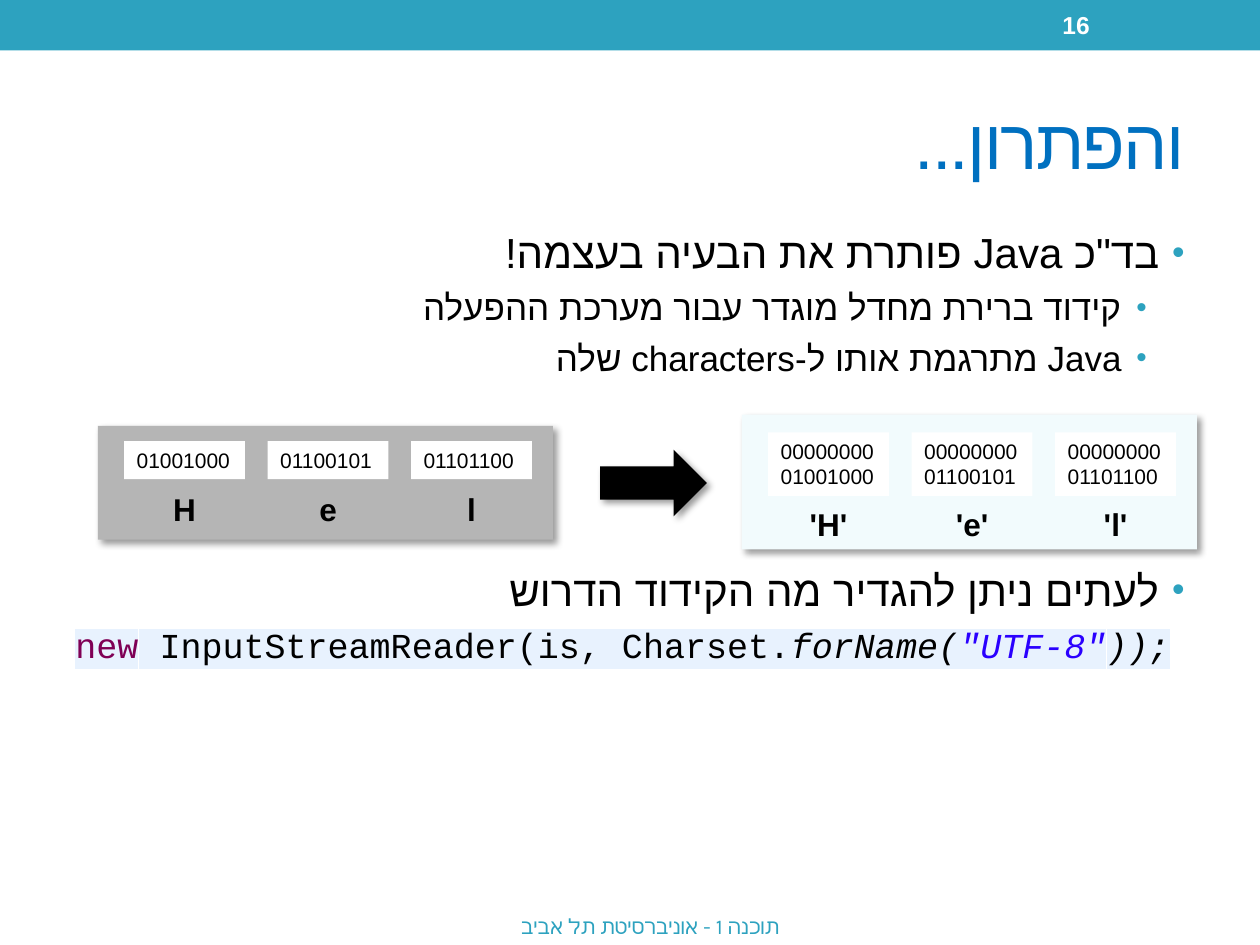
import pptx
import pptx.util
import pptx.oxml
import pptx.oxml.ns
import pptx.dml.color
import pptx.enum.shapes
import pptx.enum.text

Pt = pptx.util.Pt
RGB = pptx.dml.color.RGBColor
Kind = pptx.enum.shapes.MSO_SHAPE
Align = pptx.enum.text.PP_ALIGN
Anchor = pptx.enum.text.MSO_ANCHOR
NS = pptx.oxml.ns.nsdecls("a")

TEAL = RGB(0x2D, 0xA2, 0xBF)
BLUE = RGB(0x00, 0x70, 0xC0)
BLACK = RGB(0, 0, 0)
WHITE = RGB(0xFF, 0xFF, 0xFF)
GRAY = RGB(0xB5, 0xB5, 0xB5)
PALE = RGB(0xF2, 0xFB, 0xFD)
PLUM = RGB(0x7F, 0x00, 0x55)
INK = RGB(0x2A, 0x00, 0xFF)
GLOW = RGB(0xE8, 0xF2, 0xFE)


def add_box(home, kind, place, fill, shade=False):
    box = home.add_shape(kind, *[Pt(n) for n in place])
    box.fill.solid()
    box.fill.fore_color.rgb = fill
    box.line.fill.background()
    box.shadow.inherit = False
    if shade:
        effect = box._element.spPr.find(pptx.oxml.ns.qn("a:effectLst"))
        effect.append(pptx.oxml.parse_xml(
            f'<a:outerShdw {NS} blurRad="{Pt(4)}" dist="{Pt(3)}" dir="2700000" algn="tl" '
            'rotWithShape="0"><a:srgbClr val="000000"><a:alpha val="40000"/></a:srgbClr></a:outerShdw>'))
    return box


def add_run(para, text, size, color, align, rtl=True, bold=None, font="Arial"):
    para.alignment = align
    if rtl:
        para._p.get_or_add_pPr().set("rtl", "1")
    run = para.add_run()
    run.text = text
    run.font.size = Pt(size)
    run.font.bold = bold
    run.font.color.rgb = color
    run.font.name = font
    run._r.rPr.append(pptx.oxml.parse_xml(f'<a:cs {NS} typeface="{font}"/>'))
    return run


deck = pptx.Presentation()
deck.slide_width, deck.slide_height = Pt(720), Pt(540)
slide = deck.slides.add_slide(deck.slide_layouts[5])
shapes = slide.shapes

add_box(shapes, Kind.RECTANGLE, (0, 0, 720, 28.8), TEAL)

title = shapes.title
title.left, title.top, title.width, title.height = Pt(36), Pt(42), Pt(648), Pt(78)
title.text_frame.vertical_anchor = Anchor.MIDDLE
run = add_run(title.text_frame.paragraphs[0], "והפתרון...", 40, BLUE, Align.RIGHT)
run._r.rPr.set("spc", "-100")

body = shapes.add_textbox(Pt(36), Pt(126), Pt(648), Pt(384)).text_frame
body.word_wrap = True
points = [
    ("בד\"כ Java פותרת את הבעיה בעצמה!", 24, 0, 5),
    ("קידוד ברירת מחדל מוגדר עבור מערכת ההפעלה", 20, 1, 5),
    ("Java מתרגמת אותו ל-characters שלה", 20, 1, 5),
    ("לעתים ניתן להגדיר מה הקידוד הדרוש", 24, 0, 106),
]
para = body.paragraphs[0]
for text, size, level, gap in points:
    add_run(para, text, size, BLACK, Align.RIGHT)
    para.level = level
    para.space_before = Pt(gap)
    props = para._p.pPr
    props.set("marL", str(Pt(14.4 + 21.6 * level)))
    props.set("indent", str(Pt(-14.4)))
    for mark in (f'<a:buClr {NS}><a:srgbClr val="{TEAL}"/></a:buClr>',
                 f'<a:buSzPct {NS} val="85000"/>',
                 f'<a:buFont {NS} typeface="Arial"/>',
                 f'<a:buChar {NS} char="•"/>'):
        props.append(pptx.oxml.parse_xml(mark))
    para = body.add_paragraph()

para.space_before = Pt(5)
code = [
    ("new", PLUM, False),
    (" InputStreamReader(is, Charset.", BLACK, False),
    ("forName(", BLACK, True),
    ("\"UTF-8\"", INK, True),
    ("));", BLACK, True),
]
for text, color, slant in code:
    run = add_run(para, text, 20, color, Align.LEFT, rtl=False, font="Courier New")
    run.font.italic = slant
    run._r.rPr.find(pptx.oxml.ns.qn("a:latin")).addprevious(pptx.oxml.parse_xml(
        f'<a:highlight {NS}><a:srgbClr val="{GLOW}"/></a:highlight>'))

bytes_in = ["01001000", "01100101", "01101100"]
panels = [
    (56, 243.4, 65, GRAY, 8.6, 21.8, 33, bytes_in, ["H", "e", "l"]),
    (424, 237, 77, PALE, 10, 36.3, 48, ["00000000" + b for b in bytes_in], ["'H'", "'e'", "'l'"]),
]
for left, top, high, fill, drop, tall, base, codes, signs in panels:
    group = shapes.add_group_shape().shapes
    add_box(group, Kind.RECTANGLE, (left, top, 260, high), fill, shade=True)
    for col, (bits, sign) in enumerate(zip(codes, signs)):
        x = left + 15 + 82 * col
        cell = add_box(group, Kind.RECTANGLE, (x, top + drop, 69, tall), WHITE)
        cell.text_frame.word_wrap = True
        cell.text_frame.vertical_anchor = Anchor.TOP
        add_run(cell.text_frame.paragraphs[0], bits, 12, BLACK, Align.LEFT, rtl=False)
        label = group.add_textbox(Pt(x), Pt(top + base), Pt(69), Pt(29)).text_frame
        label.word_wrap = True
        add_run(label.paragraphs[0], sign, 18, BLACK, Align.CENTER, bold=True)

add_box(shapes, Kind.RIGHT_ARROW, (343, 257, 61, 38), BLACK, shade=True)

notes = [
    ((600, 1.4, 84, 26), "16", 14, WHITE, Align.LEFT, True, "Arial"),
    ((209.5, 516, 324, 26), "תוכנה 1 - אוניברסיטת תל אביב", 12, TEAL, Align.CENTER, None, "Karla"),
]
for place, text, size, color, align, bold, font in notes:
    frame = shapes.add_textbox(*[Pt(n) for n in place]).text_frame
    frame.word_wrap = True
    frame.vertical_anchor = Anchor.MIDDLE
    add_run(frame.paragraphs[0], text, size, color, align, bold=bold, font=font)

deck.save("out.pptx")
